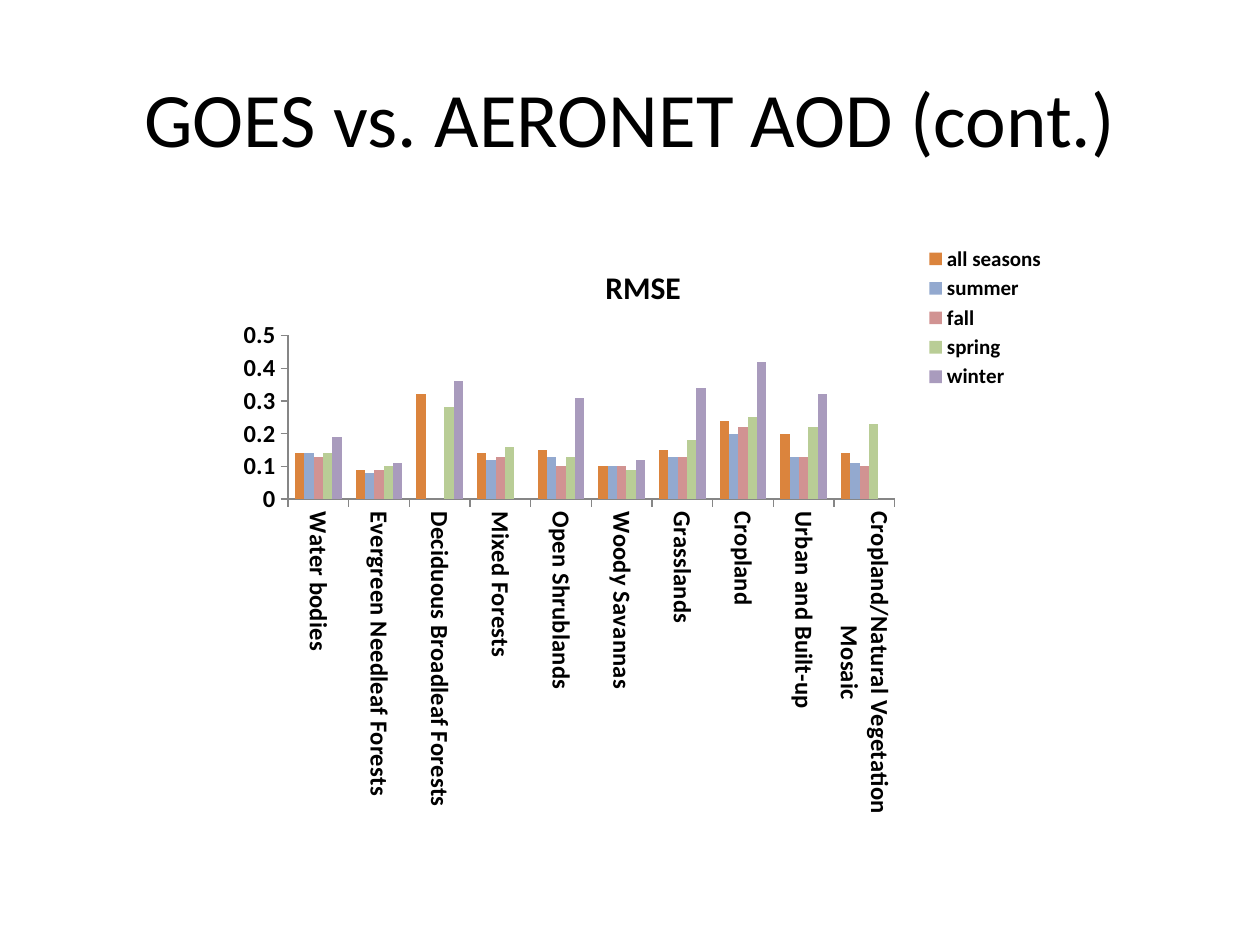
import pptx
import pptx.chart.data
import pptx.dml.color
import pptx.enum.chart
import pptx.enum.text
import pptx.oxml
import pptx.oxml.ns
import pptx.util
from pptx.util import Inches

FONT = "Calibri"
COLORS = {
    "text": "000000",
    "axis": "868686",
    "all seasons": "DB843D",
    "summer": "93A9CF",
    "fall": "D19392",
    "spring": "B9CD96",
    "winter": "A99BBD",
}
# The longest name is broken by hand, as turned labels do not wrap
LAND_COVERS = [
    "Water bodies", "Evergreen Needleaf Forests", "Deciduous Broadleaf Forests",
    "Mixed Forests", "Open Shrublands", "Woody Savannas", "Grasslands",
    "Cropland", "Urban and Built-up", "Cropland/Natural Vegetation\nMosaic",
]
RMSE = {
    "all seasons": [0.14, 0.09, 0.32, 0.14, 0.15, 0.1, 0.15, 0.24, 0.2, 0.14],
    "summer": [0.14, 0.08, None, 0.12, 0.13, 0.1, 0.13, 0.2, 0.13, 0.11],
    "fall": [0.13, 0.09, None, 0.13, 0.1, 0.1, 0.13, 0.22, 0.13, 0.1],
    "spring": [0.14, 0.1, 0.28, 0.16, 0.13, 0.09, 0.18, 0.25, 0.22, 0.23],
    "winter": [0.19, 0.11, 0.36, None, 0.31, 0.12, 0.34, 0.42, 0.32, None],
}


def rgb(name):
    return pptx.dml.color.RGBColor.from_string(COLORS[name])


def format_font(font, size, bold=False):
    font.name = FONT
    font.size = pptx.util.Pt(size)
    font.bold = bold
    font.color.rgb = rgb("text")


def place_part(element, index, inner=False, **fractions):
    """Give a chart part a manual layout, in fractions of the chart."""
    for old in element.findall(pptx.oxml.ns.qn("c:layout")):
        element.remove(old)
    target = '<c:layoutTarget val="inner"/>' if inner else ""
    modes = "".join(f'<c:{key}Mode val="edge"/>' for key in ("x", "y"))
    values = "".join(f'<c:{key} val="{value}"/>' for key, value in fractions.items())
    element.insert(index, pptx.oxml.parse_xml(
        f'<c:layout {pptx.oxml.ns.nsdecls("c")}><c:manualLayout>'
        f"{target}{modes}{values}</c:manualLayout></c:layout>"))


def add_title(slide, text):
    title = slide.shapes.title
    title.left, title.top = Inches(0.5), Inches(0.3)
    title.width, title.height = Inches(9), Inches(1.25)
    title.text_frame.text = text
    title.text_frame.vertical_anchor = pptx.enum.text.MSO_ANCHOR.MIDDLE
    paragraph = title.text_frame.paragraphs[0]
    paragraph.alignment = pptx.enum.text.PP_ALIGN.CENTER
    format_font(paragraph.runs[0].font, 44)


def format_axis(axis):
    axis.has_major_gridlines = False
    axis.major_tick_mark = pptx.enum.chart.XL_TICK_MARK.OUTSIDE
    axis.format.line.color.rgb = rgb("axis")
    axis.format.line.width = pptx.util.Pt(0.75)
    format_font(axis.tick_labels.font, 14, bold=True)


def add_rmse_chart(slide):
    data = pptx.chart.data.CategoryChartData()
    data.categories = LAND_COVERS
    for season, values in RMSE.items():
        data.add_series(season, values)
    chart = slide.shapes.add_chart(
        pptx.enum.chart.XL_CHART_TYPE.COLUMN_CLUSTERED,
        Inches(1.83), Inches(1.92), Inches(6.51), Inches(4.64), data).chart
    format_font(chart.font, 10)

    # Columns
    plot = chart.plots[0]
    plot.vary_by_categories = False
    plot.gap_width = 150
    plot.overlap = 0
    for series in plot.series:
        series.format.fill.solid()
        series.format.fill.fore_color.rgb = rgb(series.name)
    place_part(chart._chartSpace.chart.plotArea, 0, inner=True,
               x=0.07, y=0.16, w=0.74, h=0.28)

    # Axes, with category labels reading downwards
    format_axis(chart.category_axis)
    format_axis(chart.value_axis)
    chart.value_axis.minimum_scale = 0
    chart.value_axis.maximum_scale = 0.5
    chart.value_axis.major_unit = 0.1
    chart.value_axis.tick_labels.number_format = "General"
    chart.value_axis.tick_labels.number_format_is_linked = False
    body = chart.category_axis._element.find(".//" + pptx.oxml.ns.qn("a:bodyPr"))
    body.set("rot", "5400000")
    body.set("vert", "horz")

    # Chart title
    chart.has_title = True
    chart.chart_title.text_frame.text = "RMSE"
    format_font(chart.chart_title.text_frame.paragraphs[0].runs[0].font, 18, bold=True)
    place_part(chart.chart_title._element, 1, x=0.45, y=0.03)

    # Legend
    chart.has_legend = True
    chart.legend.position = pptx.enum.chart.XL_LEGEND_POSITION.CORNER
    chart.legend.include_in_layout = False
    format_font(chart.legend.font, 12, bold=True)
    place_part(chart.legend._element, 1, x=0.85, y=0, w=0.15, h=0.26)


def main():
    presentation = pptx.Presentation()
    presentation.slide_width = Inches(10)
    presentation.slide_height = Inches(7.5)
    slide = presentation.slides.add_slide(presentation.slide_layouts[5])
    add_title(slide, "GOES vs. AERONET AOD (cont.)")
    add_rmse_chart(slide)
    presentation.save("out.pptx")


if __name__ == "__main__":
    main()
